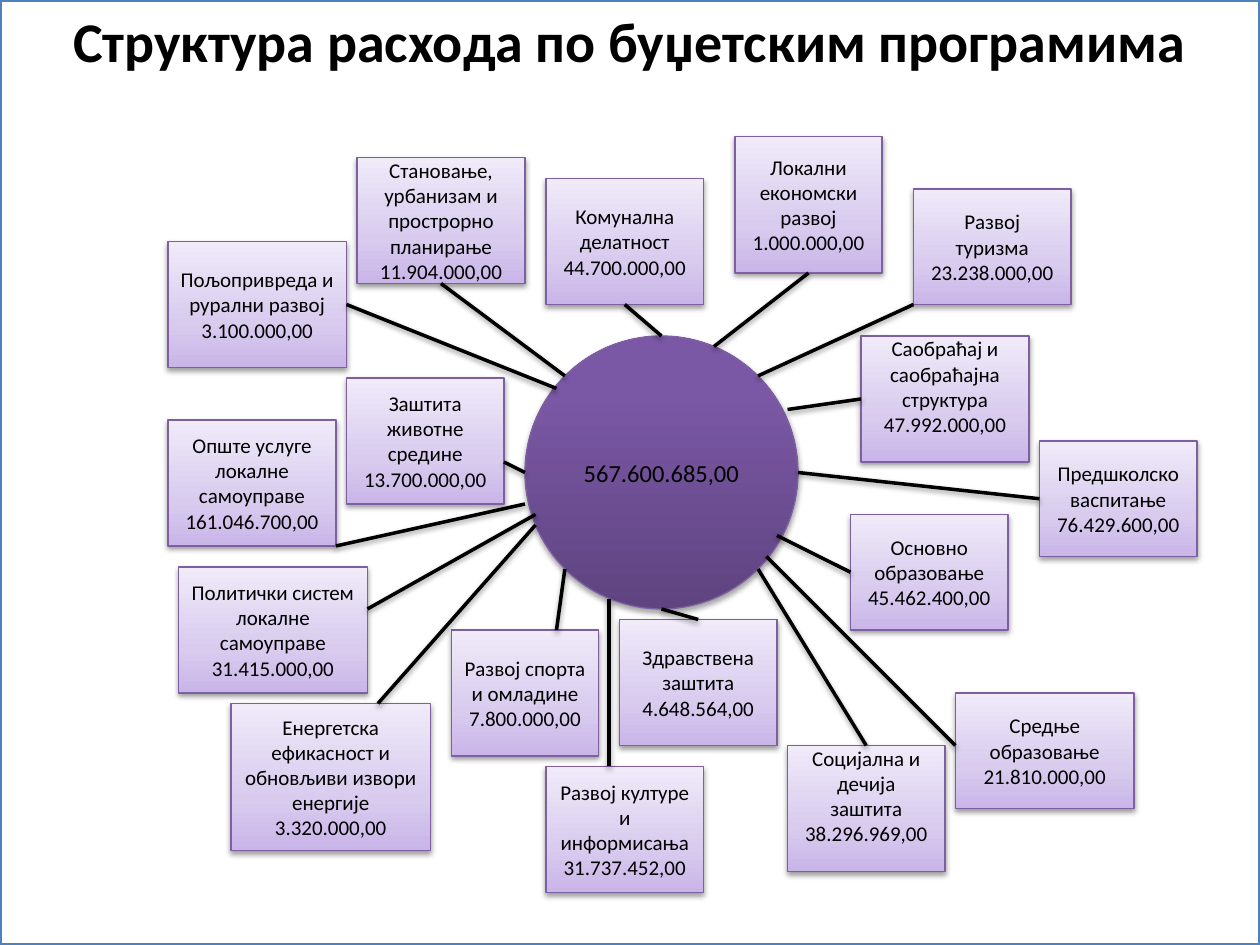
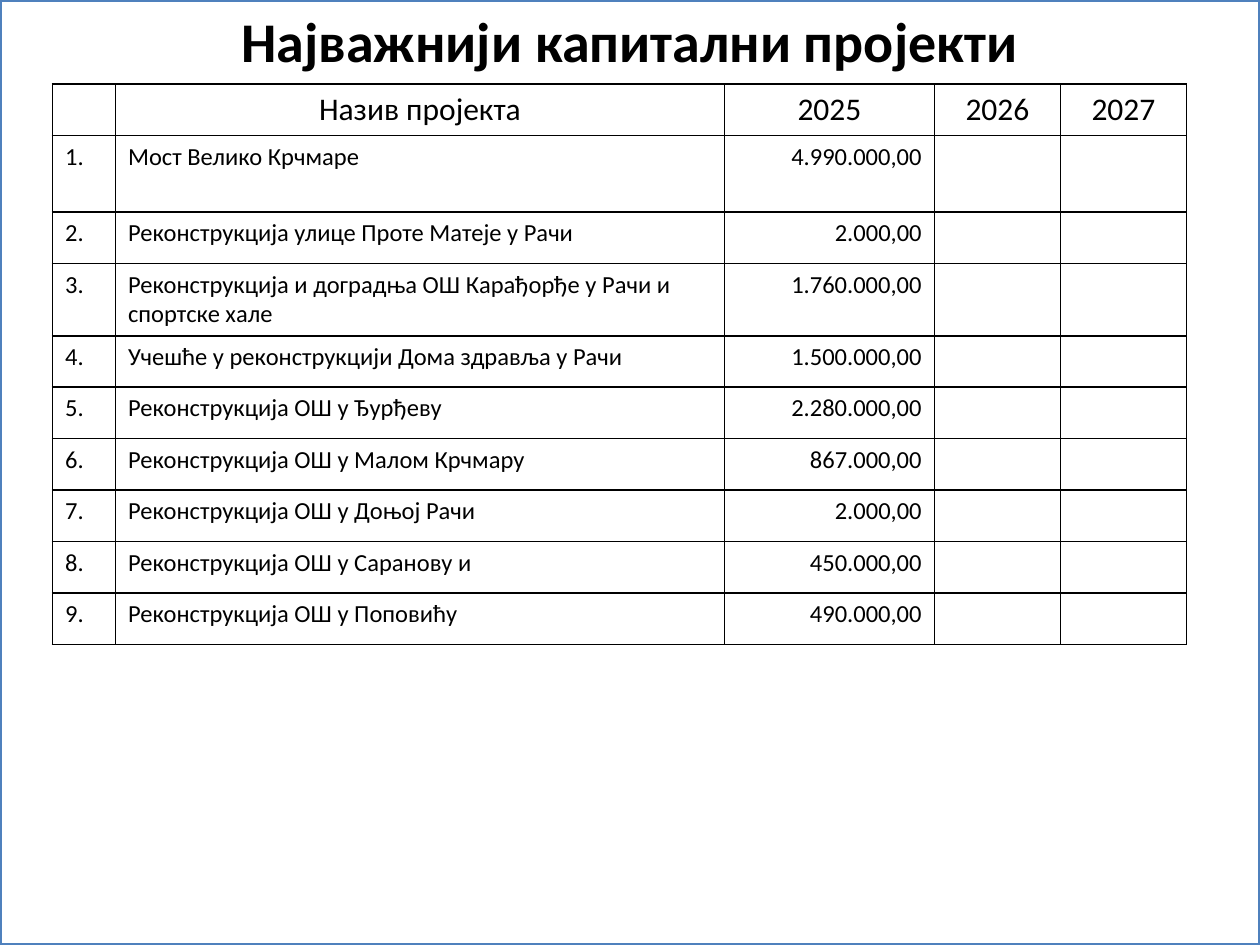
from copy import deepcopy

from lxml.etree import SubElement
from pptx import Presentation
from pptx.dml.color import RGBColor
from pptx.enum.shapes import MSO_CONNECTOR, MSO_SHAPE
from pptx.enum.text import MSO_ANCHOR, PP_ALIGN
from pptx.oxml.ns import qn
from pptx.util import Emu, Pt

PIXEL = 7620
WIDTH, HEIGHT = 1200, 900
FONT = "Calibri"
BLACK, WHITE = "000000", "FFFFFF"
FRAME_BLUE, PURPLE = "4F81BD", "7D60A0"
HUB_STOPS = [(0, "5F4480"), (0.8, "7B58A6"), (1, "7C57A8")]
BOX_STOPS = [(0, "C9B5E8"), (0.35, "D8CBEE"), (1, "F0EAF9")]
TOP, LEFT, BOTTOM, RIGHT = range(4)

TOTAL = "567.600.685,00"
HUB = (500, 320, 260, 260)
LINE_GAP = 24

PROGRAMS = [
    ("Становање,\nурбанизам и прострорно планирање 11.904.000,00",
     (340, 150, 160, 120), BOTTOM, (538, 358), 0),
    ("Комунална делатност\n44.700.000,00", (520, 170, 150, 120), BOTTOM, (630, 320), 0),
    ("Саобраћај и саобраћајна структура\n47.992.000,00",
     (820, 320, 160, 120), LEFT, (750, 390), LINE_GAP),
    ("Локални економски развој 1.000.000,00", (700, 130, 140, 130), BOTTOM, (680, 330), 0),
    ("Пољопривреда и рурални развој 3.100.000,00",
     (160, 230, 170, 120), RIGHT, (530, 370), 0),
    ("Опште услуге локалне самоуправе\n161.046.700,00",
     (160, 400, 160, 120), (320, 520), (500, 480), 0),
    ("Заштита животне средине 13.700.000,00",
     (330, 360, 150, 120), (480, 440), (500, 450), 0),
    ("Политички систем локалне самоуправе\n31.415.000,00",
     (170, 540, 180, 120), (350, 580), (510, 490), 0),
    ("Енергетска ефикасност и обновљиви извори енергије\n3.320.000,00",
     (220, 670, 190, 140), (360, 670), (510, 500), 0),
    ("Предшколско васпитање\n76.429.600,00", (990, 420, 150, 110), LEFT, (760, 450), 0),
    ("Основно образовање\n45.462.400,00", (810, 490, 150, 110), LEFT, (740, 510), 0),
    ("Развој туризма\n23.238.000,00", (870, 180, 150, 110), (870, 290), (722, 358), 0),
    ("Развој културе и информисања\n31.737.452,00",
     (520, 730, 150, 120), (580, 730), (580, 570), 0),
    ("Здравствена заштита\n4.648.564,00", (590, 590, 150, 120), TOP, (630, 580), 0),
    ("Развој спорта и омладине\n7.800.000,00",
     (430, 600, 140, 120), (530, 600), (538, 542), 0),
    ("Социјална и дечија заштита\n38.296.969,00",
     (750, 710, 150, 120), TOP, (722, 542), LINE_GAP),
    ("Средње образовање 21.810.000,00", (910, 660, 170, 110), (910, 710), (730, 530), 0),
]

HEADINGS = ["", "Назив пројекта", "2025", "2026", "2027"]
PROJECTS = [
    ("Мост Велико Крчмаре", "4.990.000,00"),
    ("Реконструкција улице Проте Матеје у Рачи", "2.000,00"),
    ("Реконструкција и доградња ОШ Карађорђе у Рачи и спортске хале", "1.760.000,00"),
    ("Учешће у реконструкцији Дома здравља у Рачи", "1.500.000,00"),
    ("Реконструкција ОШ у Ђурђеву", "2.280.000,00"),
    ("Реконструкција ОШ у Малом Крчмару", "867.000,00"),
    ("Реконструкција ОШ у Доњој Рачи", "2.000,00"),
    ("Реконструкција ОШ у Саранову и", "450.000,00"),
    ("Реконструкција ОШ у Поповићу", "490.000,00"),
]


def px(length):
    return Emu(length * PIXEL)


def color(value):
    return RGBColor.from_string(value)


class Painter:
    def __init__(self):
        self.deck = Presentation()
        self.deck.slide_width, self.deck.slide_height = px(WIDTH), px(HEIGHT)
        self.page = None

    def add_page(self, title):
        self.page = self.deck.slides.add_slide(self.deck.slide_layouts[6])
        frame = self.shape(MSO_SHAPE.RECTANGLE, (0, 0, WIDTH, HEIGHT), FRAME_BLUE, 2)
        frame.fill.solid()
        frame.fill.fore_color.rgb = color(WHITE)
        frame.text_frame.vertical_anchor = MSO_ANCHOR.TOP
        self.set_text(frame.text_frame, title, 32, bold=True)

    def shape(self, kind, area, line, width):
        shape = self.page.shapes.add_shape(kind, *map(px, area))
        shape.shadow.inherit = False
        shape.line.color.rgb = color(line)
        shape.line.width = Pt(width)
        return shape

    def set_text(self, frame, text, size, align=PP_ALIGN.CENTER, bold=False):
        frame.word_wrap = True
        frame.text = text
        for para in frame.paragraphs:
            para.alignment = align
            for span in para.runs:
                span.font.name = FONT
                span.font.size = Pt(size)
                span.font.bold = bold
                span.font.color.rgb = color(BLACK)

    def cast_shadow(self, shape, distance, opacity):
        properties = shape.element.spPr
        effects = properties.find(qn("a:effectLst"))
        if effects is None:
            effects = SubElement(properties, qn("a:effectLst"))
        shadow = SubElement(effects, qn("a:outerShdw"), blurRad="40000",
                            dist=str(distance), dir="5400000", rotWithShape="0")
        tint = SubElement(shadow, qn("a:srgbClr"), val=BLACK)
        SubElement(tint, qn("a:alpha"), val=str(opacity * 1000))

    def bubble(self, kind, area, stops, text, size, distance=20000, opacity=38, lift=0):
        bubble = self.shape(kind, area, PURPLE, 0.75)
        bubble.fill.gradient()
        bubble.fill.gradient_angle = 90
        stop_list = bubble.element.spPr.find(".//" + qn("a:gsLst"))
        stop_list.append(deepcopy(stop_list[-1]))
        for stop, (position, value) in zip(bubble.fill.gradient_stops, stops):
            stop.position = position
            stop.color.rgb = color(value)
        self.cast_shadow(bubble, distance, opacity)
        frame = bubble.text_frame
        frame.vertical_anchor = MSO_ANCHOR.MIDDLE
        frame.margin_bottom += px(lift)
        self.set_text(frame, text, size)
        return bubble

    def link(self, box, end, hub_point):
        joined = isinstance(end, int)
        start = hub_point if joined else end
        link = self.page.shapes.add_connector(
            MSO_CONNECTOR.STRAIGHT, *map(px, start + hub_point))
        if joined:
            link.begin_connect(box, end)
        link.line.color.rgb = color(BLACK)
        link.line.width = Pt(2)
        self.cast_shadow(link, 20000, 38)

    def cell(self, cell, text, size, align):
        for side in ("L", "R", "T", "B"):
            border = SubElement(cell._tc.get_or_add_tcPr(), qn("a:ln" + side), w="12700")
            fill = SubElement(border, qn("a:solidFill"))
            SubElement(fill, qn("a:srgbClr"), val=BLACK)
        cell.fill.background()
        if text:
            self.set_text(cell.text_frame, text, size, align)

    def table(self, left, top, widths, heights, rows, aligns):
        grid = self.page.shapes.add_table(
            len(rows), len(widths), px(left), px(top),
            px(sum(widths)), px(sum(heights))).table
        grid.first_row = grid.horz_banding = False
        for column, width in zip(grid.columns, widths):
            column.width = px(width)
        for row, height in zip(grid.rows, heights):
            row.height = px(height)
        for r, texts in enumerate(rows):
            for c, text in enumerate(texts):
                align = aligns[c] if r else PP_ALIGN.CENTER
                self.cell(grid.cell(r, c), text, 14 if r else 18, align)


def draw_programs(painter):
    painter.add_page("Структура расхода по буџетским програмима")
    painter.bubble(MSO_SHAPE.OVAL, HUB, HUB_STOPS, TOTAL, 14, 23000, 35)
    boxes = [painter.bubble(MSO_SHAPE.RECTANGLE, area, BOX_STOPS, text, 12, lift=lift)
             for text, area, _, _, lift in PROGRAMS]
    for box, (_, _, end, hub_point, _) in zip(boxes, PROGRAMS):
        painter.link(box, end, hub_point)


def draw_projects(painter):
    painter.add_page("Најважнији капитални пројекти")
    rows = [HEADINGS] + [[f"{number}.", name, amount, "", ""]
                         for number, (name, amount) in enumerate(PROJECTS, 1)]
    heights = [49, 73] + [49] * (len(PROJECTS) - 1)
    aligns = [PP_ALIGN.LEFT] * 2 + [PP_ALIGN.RIGHT] * 3
    painter.table(50, 80, [60, 580, 200, 120, 120], heights, rows, aligns)


def main():
    painter = Painter()
    draw_programs(painter)
    draw_projects(painter)
    painter.deck.save("out.pptx")


if __name__ == "__main__":
    main()
